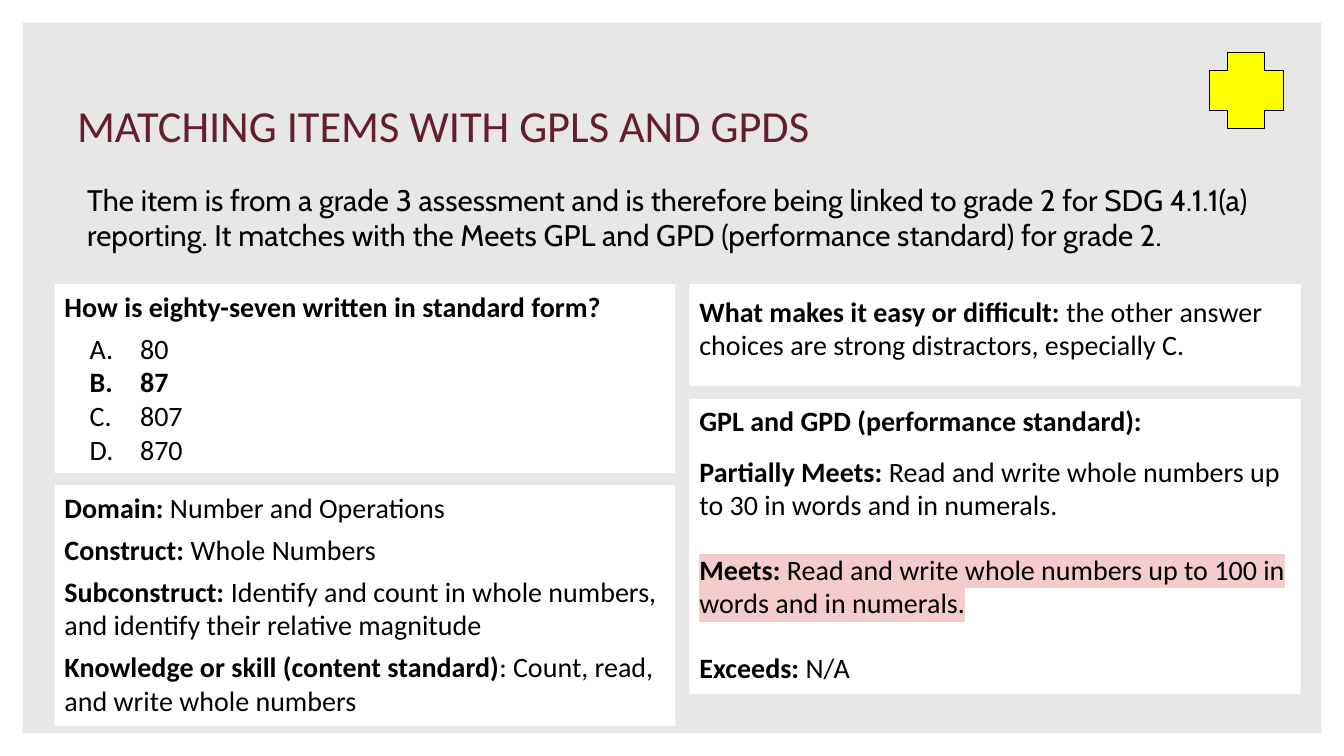
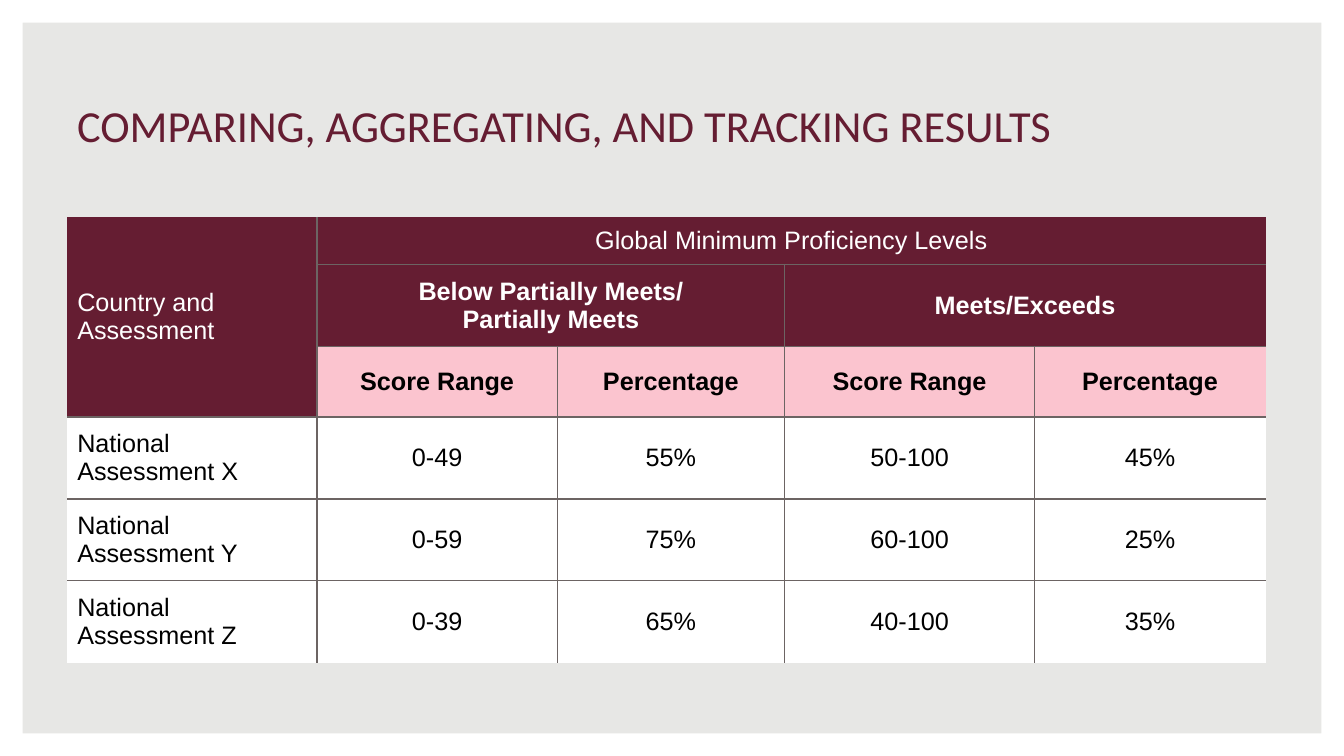
import dataclasses

import lxml.etree
import pptx
import pptx.dml.color
import pptx.enum.shapes
import pptx.enum.text
import pptx.oxml.ns
import pptx.util

Pt = pptx.util.Pt
MSO_SHAPE = pptx.enum.shapes.MSO_SHAPE
MSO_ANCHOR = pptx.enum.text.MSO_ANCHOR
PP_ALIGN = pptx.enum.text.PP_ALIGN
qn = pptx.oxml.ns.qn


@dataclasses.dataclass(frozen=True)
class Theme:
    background: str = "E7E7E5"
    white: str = "FFFFFF"
    black: str = "000000"
    maroon: str = "651D32"
    pink: str = "FBC4CF"
    highlight: str = "F4CCCC"
    yellow: str = "FFFF00"
    grid: str = "6C6463"
    font: str = "Calibri"
    intro_font: str = "Cabin"
    table_font: str = "Arial"
    title_size: float = 31.7
    intro_size: float = 21.2
    card_size: float = 20
    table_size: float = 18


@dataclasses.dataclass(frozen=True)
class Line:
    """One card paragraph: a bold lead-in followed by regular text."""
    bold: str = ""
    regular: str = ""
    before: float = 0
    indent: float = 0
    highlighted: bool = False


def rgb(color):
    return pptx.dml.color.RGBColor.from_string(color)


class Deck:
    def __init__(self, theme):
        self.theme = theme
        self.presentation = pptx.Presentation()
        self.presentation.slide_width = Pt(960)
        self.presentation.slide_height = Pt(540)
        self.slide = None

    def start_slide(self, title):
        self.slide = self.presentation.slides.add_slide(self.presentation.slide_layouts[6])
        background = self.slide.background.fill
        background.solid()
        background.fore_color.rgb = rgb(self.theme.background)
        self.shape(MSO_SHAPE.FRAME, (0, 0, 960, 540), self.theme.white, adjustment=0.03)
        self.text(title, (48, 66, 856, 46), self.theme.font, self.theme.title_size,
                  self.theme.maroon, MSO_ANCHOR.BOTTOM)

    def shape(self, kind, box, fill, line=None, adjustment=None):
        shape = self.slide.shapes.add_shape(kind, *map(Pt, box))
        shape.shadow.inherit = False
        shape.fill.solid()
        shape.fill.fore_color.rgb = rgb(fill)
        if line:
            shape.line.color.rgb = rgb(line)
            shape.line.width = Pt(0.75)
        else:
            shape.line.fill.background()
        if adjustment is not None:
            shape.adjustments[0] = adjustment
        return shape

    def format_run(self, run, font, size, color, bold=False):
        run.font.name = font
        run.font.size = Pt(size)
        run.font.color.rgb = rgb(color)
        run.font.bold = bold

    def text(self, text, box, font, size, color, anchor=MSO_ANCHOR.TOP):
        text_frame = self.slide.shapes.add_textbox(*map(Pt, box)).text_frame
        text_frame.word_wrap = True
        text_frame.vertical_anchor = anchor
        text_frame.text = text
        self.format_run(text_frame.paragraphs[0].runs[0], font, size, color)

    def highlight(self, run):
        properties = run.font._element
        mark = lxml.etree.Element(qn("a:highlight"))
        lxml.etree.SubElement(mark, qn("a:srgbClr"), val=self.theme.highlight)
        properties.find(qn("a:solidFill")).addnext(mark)

    def card(self, box, lines, inset=3.6):
        text_frame = self.shape(MSO_SHAPE.RECTANGLE, box, self.theme.white).text_frame
        text_frame.word_wrap = True
        text_frame.vertical_anchor = MSO_ANCHOR.TOP
        text_frame.margin_top = text_frame.margin_bottom = Pt(inset)
        for index, line in enumerate(lines):
            paragraph = text_frame.add_paragraph() if index else text_frame.paragraphs[0]
            paragraph.alignment = PP_ALIGN.LEFT
            paragraph.space_before = Pt(line.before)
            paragraph._p.get_or_add_pPr().set("marL", str(Pt(line.indent)))
            for text, bold in ((line.bold, True), (line.regular, False)):
                if not text:
                    continue
                run = paragraph.add_run()
                run.text = text
                self.format_run(run, self.theme.font, self.theme.card_size,
                                self.theme.black, bold)
                if line.highlighted:
                    self.highlight(run)

    def cell_borders(self, cell, visible_sides):
        properties = cell._tc.get_or_add_tcPr()
        for side in "LRTB":
            line = lxml.etree.SubElement(properties, qn(f"a:ln{side}"), w=str(Pt(1)))
            if side in visible_sides:
                fill = lxml.etree.SubElement(line, qn("a:solidFill"))
                lxml.etree.SubElement(fill, qn("a:srgbClr"), val=self.theme.grid)
            else:
                lxml.etree.SubElement(line, qn("a:noFill"))

    def cell(self, cell, text, fill, color, bold, alignment):
        cell.fill.solid()
        cell.fill.fore_color.rgb = rgb(fill)
        cell.vertical_anchor = MSO_ANCHOR.MIDDLE
        cell.text_frame.text = text
        for paragraph in cell.text_frame.paragraphs:
            paragraph.alignment = alignment
            for run in paragraph.runs:
                self.format_run(run, self.theme.table_font, self.theme.table_size, color, bold)

    def table(self, left, top, widths, heights, rows, merges, row_styles):
        """Draw a table with inner grid lines; row_styles holds (fill, color, bold)."""
        table = self.slide.shapes.add_table(
            len(rows), len(widths), Pt(left), Pt(top), Pt(sum(widths)), Pt(sum(heights))).table
        table.first_row = table.horz_banding = False
        for column, width in zip(table.columns, widths):
            column.width = Pt(width)
        for row, height in zip(table.rows, heights):
            row.height = Pt(height)
        for first, last in merges:
            table.cell(*first).merge(table.cell(*last))
        for row, texts in enumerate(rows):
            for column, text in enumerate(texts):
                cell = table.cell(row, column)
                if cell.is_spanned:
                    continue
                inner = {"L": column > 0, "R": column + cell.span_width < len(widths),
                         "T": row > 0, "B": row + cell.span_height < len(rows)}
                self.cell_borders(cell, [side for side in inner if inner[side]])
                alignment = PP_ALIGN.CENTER if column else PP_ALIGN.LEFT
                self.cell(cell, text, *row_styles[row], alignment)


def matching_slide(deck):
    theme = deck.theme
    deck.start_slide("MATCHING ITEMS WITH GPLS AND GPDS")
    deck.text("The item is from a grade 3 assessment and is therefore being linked to grade 2 "
              "for SDG 4.1.1(a) reporting. It matches with the Meets GPL and GPD "
              "(performance standard) for grade 2.",
              (55.2, 126, 848.8, 60), theme.intro_font, theme.intro_size, theme.black)
    left_column, right_column = (39, 443.5), (492.5, 436.5)

    def card(column, top, height, lines, **options):
        left, width = column
        deck.card((left, top, width, height), lines, **options)

    card(left_column, 203, 135, [
        Line("How is eighty-seven written in standard form?"),
        Line(regular="A.\t80", before=6, indent=18),
        Line("B.\t87", indent=18),
        Line(regular="C.\t807", indent=18),
        Line(regular="D.\t870", indent=18)])
    card(right_column, 285, 211, [
        Line("GPL and GPD (performance standard):"),
        Line("Partially Meets: ",
             "Read and write whole numbers up to 30 in words and in numerals.", before=12),
        Line("Meets: ", "Read and write whole numbers up to 100 in words and in numerals.",
             before=22, highlighted=True),
        Line("Exceeds: ", "N/A", before=22)])
    card(left_column, 346.5, 172, [
        Line("Domain: ", "Number and Operations"),
        Line("Construct: ", "Whole Numbers", before=6),
        Line("Subconstruct: ", "Identify and count in whole numbers, and identify their "
             "relative magnitude", before=6),
        Line("Knowledge or skill (content standard)",
             ": Count, read, and write whole numbers", before=6)])
    deck.shape(MSO_SHAPE.CROSS, (864, 37.5, 52.5, 54.5), theme.yellow, theme.black, 0.25)
    card(right_column, 203, 73, [
        Line("What makes it easy or difficult: ",
             "the other answer choices are strong distractors, especially C.")], inset=7.2)


def comparing_slide(deck):
    theme = deck.theme
    deck.start_slide("COMPARING, AGGREGATING, AND TRACKING RESULTS")
    heading = (theme.maroon, theme.white)
    body = (theme.white, theme.black, False)
    deck.table(
        48, 155, (178.5, 171.5, 162.5, 178.5, 165), (34, 58.5, 47, 58.5, 58.5, 58.5),
        rows=[
            ("Country and Assessment", "Global Minimum Proficiency Levels", "", "", ""),
            ("", "Below Partially Meets/\nPartially Meets", "", "Meets/Exceeds", ""),
            ("", "Score Range", "Percentage", "Score Range", "Percentage"),
            ("National\nAssessment X", "0-49", "55%", "50-100", "45%"),
            ("National\nAssessment Y", "0-59", "75%", "60-100", "25%"),
            ("National\nAssessment Z", "0-39", "65%", "40-100", "35%")],
        merges=[((0, 0), (2, 0)), ((0, 1), (0, 4)), ((1, 1), (1, 2)), ((1, 3), (1, 4))],
        row_styles=[(*heading, False), (*heading, True), (theme.pink, theme.black, True),
                    body, body, body])


def main():
    deck = Deck(Theme())
    matching_slide(deck)
    comparing_slide(deck)
    deck.presentation.save("out.pptx")


if __name__ == "__main__":
    main()
